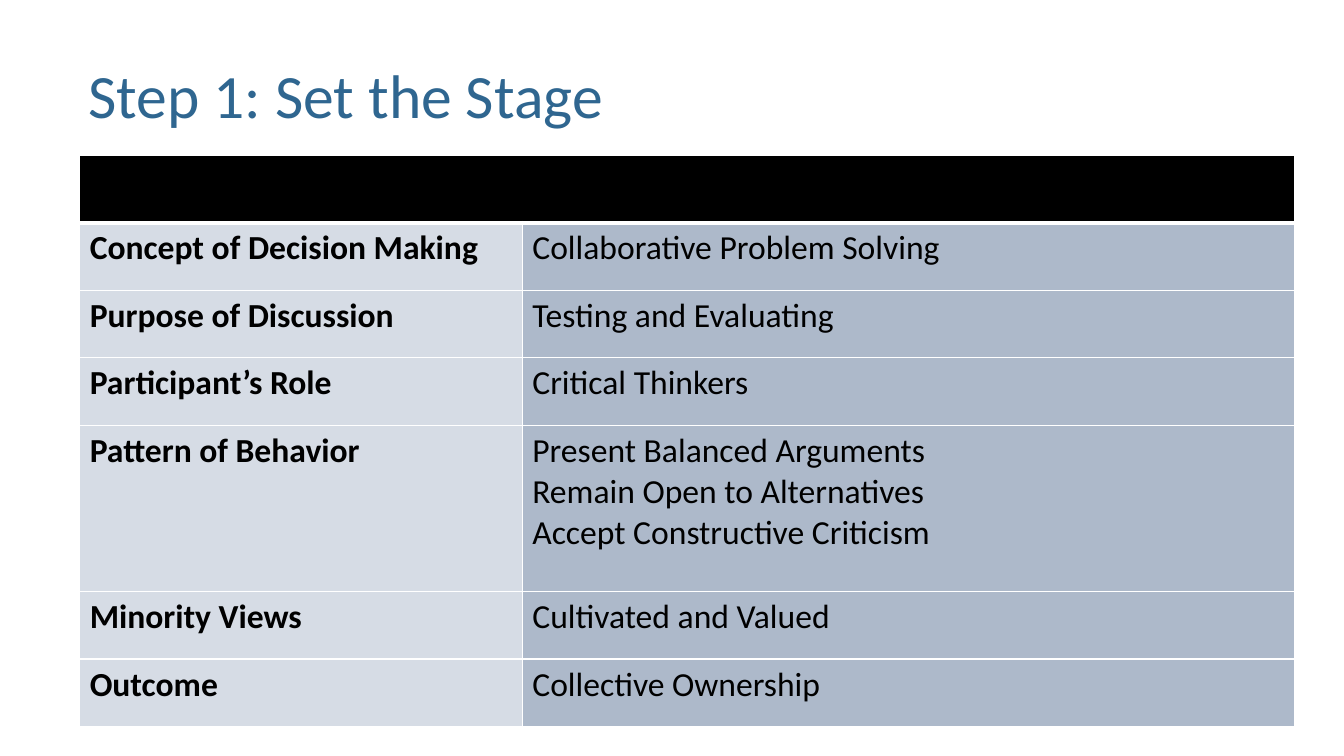
from collections import namedtuple

from lxml.etree import SubElement
from pptx import Presentation
from pptx.dml.color import RGBColor
from pptx.enum.text import MSO_ANCHOR
from pptx.oxml.ns import qn
from pptx.util import Emu, Pt

Box = namedtuple("Box", "left top width height")

FONT = "Calibri"
BLACK, WHITE, TITLE_BLUE = "000000", "FFFFFF", "2F6690"
LABEL_FILL, VALUE_FILL = "D6DCE5", "ADB9CA"
ROW_HEIGHT, TALL_ROW_HEIGHT = 67, 165
LABEL_WIDTH = 439

TITLE = "Step 1: Set the Stage"
STAGE_ROWS = [
    ("Concept of Decision Making", ["Collaborative Problem Solving"]),
    ("Purpose of Discussion", ["Testing and Evaluating"]),
    ("Participant’s Role", ["Critical Thinkers"]),
    ("Pattern of Behavior", ["Present Balanced Arguments",
                             "Remain Open to Alternatives",
                             "Accept Constructive Criticism"]),
    ("Minority Views", ["Cultivated and Valued"]),
    ("Outcome", ["Collective Ownership"]),
]


def px(length):
    """100 px to the inch."""
    return Emu(length * 9144)


def color(hex_value):
    return RGBColor.from_string(hex_value)


def write_lines(frame, lines, hex_color, **font_format):
    for index, line in enumerate(lines):
        para = frame.paragraphs[0] if index == 0 else frame.add_paragraph()
        span = para.add_run()
        span.text = line
        span.font.color.rgb = color(hex_color)
        for name, value in {"name": FONT, **font_format}.items():
            setattr(span.font, name, value)


def style_cell(cell, fill, top=1, bottom=1):
    # Borders come before the fill in the cell properties
    properties = cell._tc.get_or_add_tcPr()
    for side, points in {"L": 1, "R": 1, "T": top, "B": bottom}.items():
        border = SubElement(properties, qn(f"a:ln{side}"), w=str(Pt(points)))
        solid = SubElement(border, qn("a:solidFill"))
        SubElement(solid, qn("a:srgbClr"), val=WHITE)
    cell.fill.solid()
    cell.fill.fore_color.rgb = color(fill)


def add_title(page, box):
    frame = page.shapes.add_textbox(*map(px, box)).text_frame
    frame.word_wrap = True
    frame.vertical_anchor = MSO_ANCHOR.MIDDLE
    write_lines(frame, [TITLE], TITLE_BLUE, size=Pt(44))
    frame.paragraphs[0].line_spacing = 0.9


def add_stage_table(page, box):
    table = page.shapes.add_table(len(STAGE_ROWS) + 1, 2, *map(px, box)).table
    table.first_row = table.horz_banding = False
    for column, width in zip(table.columns, (LABEL_WIDTH, box.width - LABEL_WIDTH)):
        column.width = px(width)
    table.rows[0].height = px(ROW_HEIGHT)

    # Header band across both columns
    for column in range(2):
        style_cell(table.cell(0, column), BLACK, bottom=3)
    table.cell(0, 0).merge(table.cell(0, 1))

    # Bold label on the left, its description on the right
    for row, (label, values) in enumerate(STAGE_ROWS, start=1):
        table.rows[row].height = px(TALL_ROW_HEIGHT if len(values) > 1 else ROW_HEIGHT)
        parts = (([label], LABEL_FILL, True), (values, VALUE_FILL, False))
        for column, (lines, fill, bold) in enumerate(parts):
            cell = table.cell(row, column)
            style_cell(cell, fill, top=3 if row == 1 else 1)
            write_lines(cell.text_frame, lines, BLACK, size=Pt(24), bold=bold)


def main():
    deck = Presentation()
    deck.slide_width, deck.slide_height = px(1333), px(750)
    page = deck.slides.add_slide(deck.slide_layouts[6])
    add_title(page, Box(78, 25, 1150, 145))
    add_stage_table(page, Box(79, 154, 1205, 567))
    deck.save("out.pptx")


if __name__ == "__main__":
    main()
